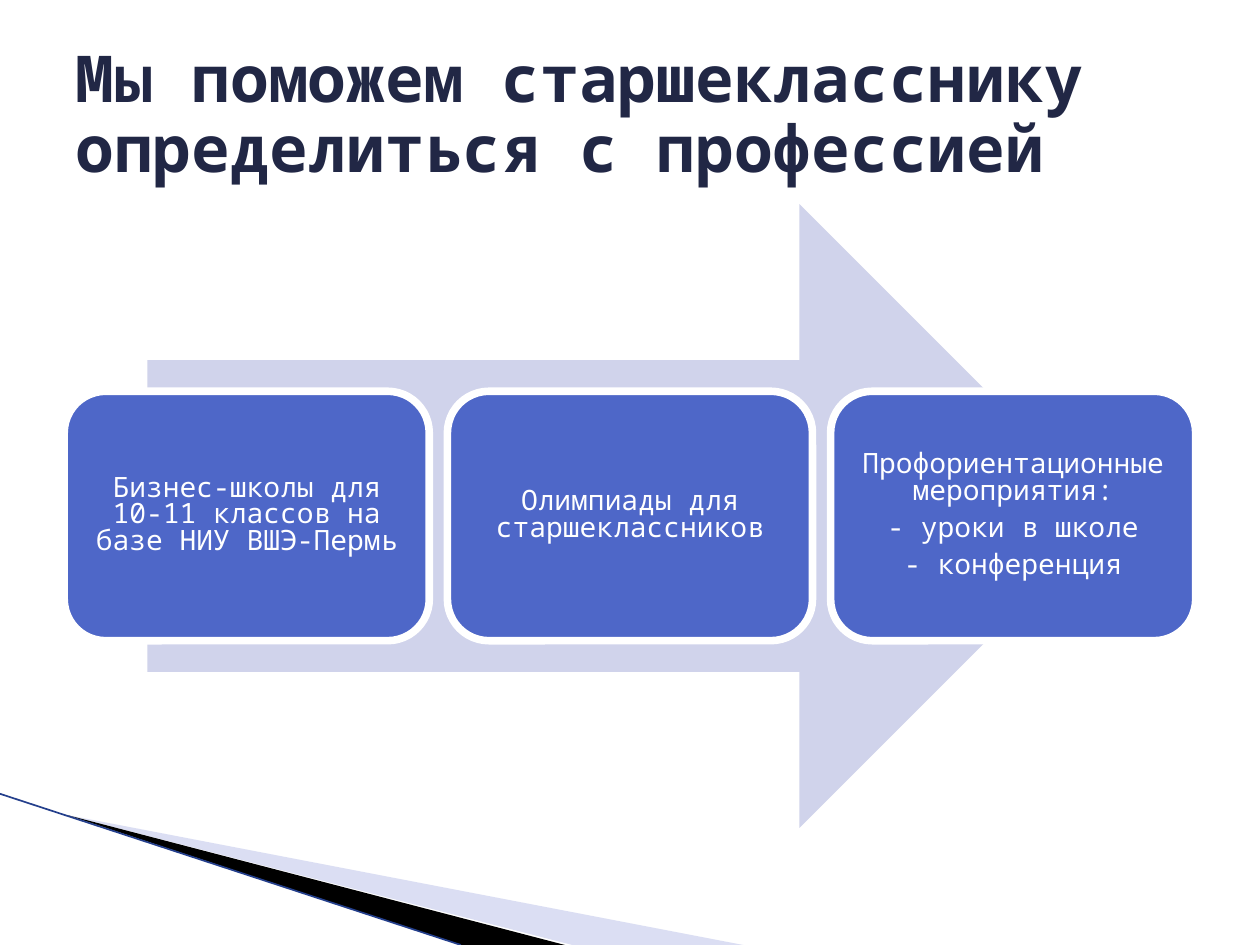
import dataclasses

import lxml.etree
import pptx
import pptx.dml.color
import pptx.enum.shapes
import pptx.enum.text
import pptx.oxml.ns
import pptx.util

SHAPE = pptx.enum.shapes.MSO_SHAPE
ALIGN = pptx.enum.text.PP_ALIGN
MIDDLE = pptx.enum.text.MSO_ANCHOR.MIDDLE


@dataclasses.dataclass(frozen=True)
class Theme:
    """Hold the colours, font and type sizes."""
    font: str = "Noto Sans Mono"
    ink: str = "212745"
    card: str = "4E67C8"
    pale: str = "D0D3EB"
    wing: str = "A6AEE1"
    edge: str = "243F8C"
    white: str = "FFFFFF"
    black: str = "000000"
    head: float = 36.9
    body: float = 16


@dataclasses.dataclass(frozen=True)
class Box:
    """Describe an area in EMU and find places inside it by share."""
    left: int
    top: int
    width: int
    height: int

    def point(self, across, down):
        """Return the point at the given shares of the box."""
        return (round(self.left + across * self.width),
                round(self.top + down * self.height))

    def inner(self, across, down, width, height):
        """Return an inner box given by shares."""
        return Box(*self.point(across, down),
                   round(width * self.width), round(height * self.height))

    def area(self):
        """Return left, top, width and height."""
        return self.left, self.top, self.width, self.height


THEME = Theme()


def tint(name):
    """Turn a hex name into a colour."""
    return pptx.dml.color.RGBColor.from_string(name)


def paint(shape, fill, line=None, weight=0):
    """Set fill and line, and drop the shadow."""
    shape.shadow.inherit = False
    shape.fill.solid()
    shape.fill.fore_color.rgb = tint(fill)
    if line:
        shape.line.color.rgb = tint(line)
        shape.line.width = pptx.util.Pt(weight)
    else:
        shape.line.fill.background()


def write(frame, lines, size, color, align, pitch, gap=0, bold=False):
    """Fill a text frame with one run for each paragraph."""
    frame.word_wrap = True
    frame.vertical_anchor = MIDDLE
    for index, line in enumerate(lines):
        para = frame.paragraphs[0] if index == 0 else frame.add_paragraph()
        para.alignment = align
        para.line_spacing = pitch
        para.space_after = pptx.util.Pt(gap)
        run = para.add_run()
        run.text = line
        run.font.name = THEME.font
        run.font.size = pptx.util.Pt(size)
        run.font.bold = bold
        run.font.color.rgb = tint(color)


def draw_wedge(slide, box, points, color, alpha=None):
    """Draw a filled outline from shares of the box."""
    first, *rest = [box.point(*point) for point in points]
    build = slide.shapes.build_freeform(*first)
    build.add_line_segments(rest, close=True)
    shape = build.convert_to_shape()
    paint(shape, color)
    if alpha:
        tone = shape._element.spPr.find(".//" + pptx.oxml.ns.qn("a:srgbClr"))
        lxml.etree.SubElement(tone, pptx.oxml.ns.qn("a:alpha"),
                              val=str(alpha * 1000))


def draw_corner(slide, box):
    """Draw the two wedges and the thin line at the foot."""
    start = (0.09, 0.14)
    draw_wedge(slide, box, [start, (1, 1), (0.77, 1)], THEME.wing, 40)
    draw_wedge(slide, box, [start, (0.76, 1), (0.62, 1)], THEME.black)
    line = slide.shapes.add_connector(
        pptx.enum.shapes.MSO_CONNECTOR.STRAIGHT,
        *box.point(0, 0), *box.point(0.62, 1))
    line.line.color.rgb = tint(THEME.edge)
    line.line.width = pptx.util.Pt(0.95)
    lxml.etree.SubElement(line._element.spPr, pptx.oxml.ns.qn("a:effectLst"))


def draw_arrow(slide, box):
    """Draw the wide arrow behind the cards."""
    paint(slide.shapes.add_shape(SHAPE.RIGHT_ARROW, *box.area()), THEME.pale)


def draw_cards(slide, box, cards, gap):
    """Draw equal cards in a row, with the gap as a share of the row."""
    count = len(cards)
    width = (1 - gap * (count - 1)) / count
    for index, lines in enumerate(cards):
        cell = box.inner(index * (width + gap), 0, width, 1)
        card = slide.shapes.add_shape(SHAPE.ROUNDED_RECTANGLE, *cell.area())
        paint(card, THEME.card, THEME.white, 4.33)
        frame = card.text_frame
        frame.margin_left = frame.margin_right = pptx.util.Inches(0.07)
        frame.margin_top = frame.margin_bottom = pptx.util.Inches(0.07)
        write(frame, lines, THEME.body, THEME.white, ALIGN.CENTER, 0.8, 5.6)


def draw_title(slide, box, text):
    """Write the slide title."""
    frame = slide.shapes.add_textbox(*box.area()).text_frame
    write(frame, [text], THEME.head, THEME.ink, ALIGN.LEFT, 0.9, bold=True)


def main():
    """Build the slide and save it."""
    deck = pptx.Presentation()
    deck.slide_width = pptx.util.Inches(10)
    deck.slide_height = pptx.util.Inches(7.5)
    slide = deck.slides.add_slide(deck.slide_layouts[6])
    page = Box(0, 0, deck.slide_width, deck.slide_height)
    cards = [
        ["Бизнес-школы для 10-11 классов на базе НИУ ВШЭ-Пермь"],
        ["Олимпиады для старшеклассников"],
        ["Профориентационные мероприятия:",
         "- уроки в школе", "- конференция"],
    ]
    draw_corner(slide, page.inner(0, 0.84, 0.59, 0.16))
    draw_arrow(slide, page.inner(0.117, 0.216, 0.765, 0.66))
    draw_cards(slide, page.inner(0.051, 0.414, 0.898, 0.264), cards, 0.016)
    draw_title(slide, page.inner(0.05, 0.04, 0.9, 0.167),
               "Мы поможем старшекласснику определиться с профессией")
    deck.save("out.pptx")


if __name__ == "__main__":
    main()
